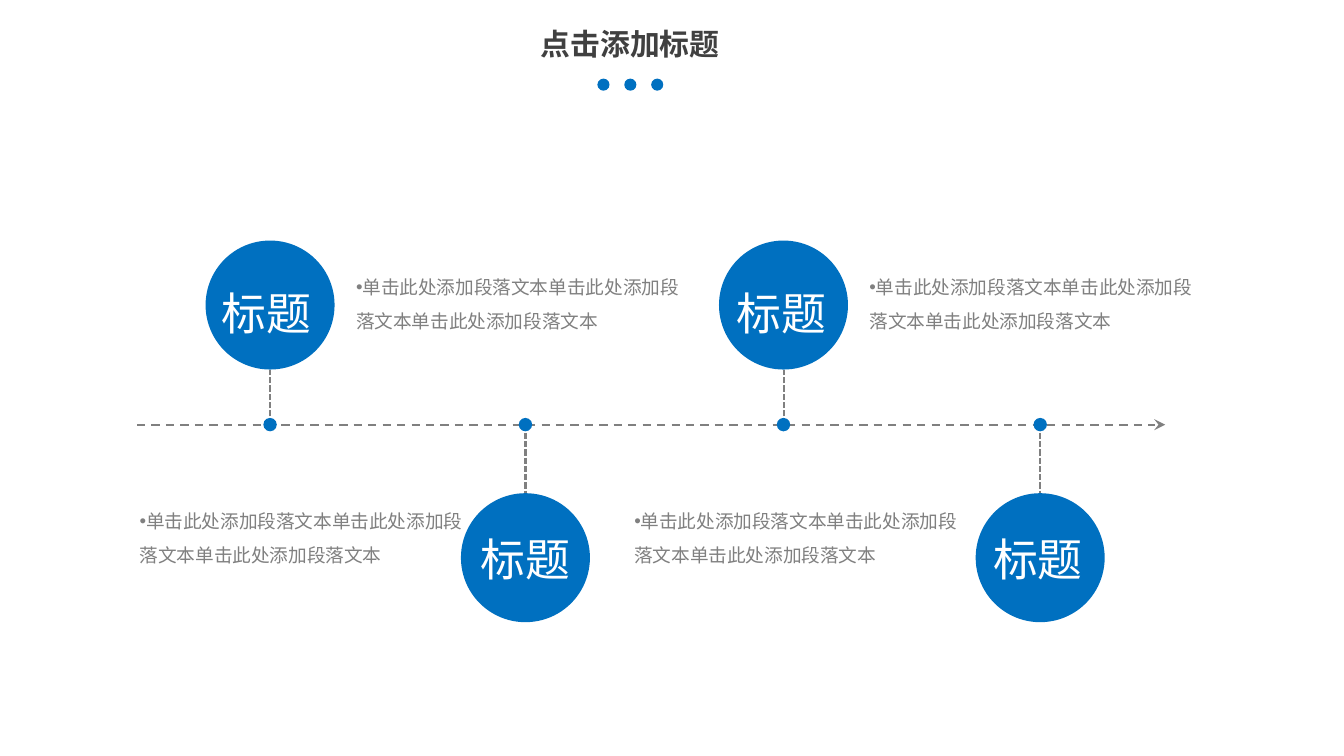
from pptx import Presentation
from pptx.dml.color import RGBColor
from pptx.enum.dml import MSO_LINE
from pptx.enum.shapes import MSO_CONNECTOR, MSO_SHAPE
from pptx.enum.text import PP_ALIGN
from pptx.oxml.ns import qn
from pptx.util import Inches, Pt
from lxml import etree

COLORS = {"blue": "0070C0", "grey": "808080", "dark": "404040", "white": "FFFFFF"}
FONT = "Noto Sans CJK SC"
BODY = "单击此处添加段落文本" * 3
AXIS_Y = 3.16
DIAMETER = 0.96

prs = Presentation()
prs.slide_width = Inches(10)
prs.slide_height = Inches(10 * 9 / 16)
s = prs.slides.add_slide(prs.slide_layouts[6])


def add_text(text, x, y, w, h, size, color, bold=False, margins=(0.1, 0.05)):
    """Add a one-paragraph text box and return the paragraph."""
    tf = s.shapes.add_textbox(Inches(x), Inches(y), Inches(w), Inches(h)).text_frame
    tf.word_wrap = True
    tf.margin_left = tf.margin_right = Inches(margins[0])
    tf.margin_top = tf.margin_bottom = Inches(margins[1])
    tf.text = text
    p = tf.paragraphs[0]
    font = p.runs[0].font
    font.size, font.name, font.bold = Pt(size), FONT, bold
    font.color.rgb = RGBColor.from_string(COLORS[color])
    etree.SubElement(p.runs[0]._r.get_or_add_rPr(), qn("a:ea")).set("typeface", FONT)
    return p


def add_dot(cx, cy, diameter):
    """Add a blue circle centred on (cx, cy)."""
    sp = s.shapes.add_shape(MSO_SHAPE.OVAL, Inches(cx - diameter / 2), Inches(cy - diameter / 2),
                            Inches(diameter), Inches(diameter))
    sp.shadow.inherit = False
    sp.fill.solid()
    sp.fill.fore_color.rgb = RGBColor.from_string(COLORS["blue"])
    sp.line.fill.background()


# Title with three dots below
add_text("点击添加标题", 2.47, 0.14, 4.44, 0.37, 16, "dark", bold=True).alignment = PP_ALIGN.CENTER
for i in range(3):
    add_dot(4.49 + 0.2 * i, 0.63, 0.09)

# Stops: centre x, circle centre y, label (x, y, width), body (x, y)
stops = [
    (2.01, 2.27, (1.55, 2.08, 1), (2.59, 1.94)),
    (3.91, 4.15, (3.48, 3.91, 0.95), (0.98, 3.68)),
    (5.83, 2.27, (5.38, 2.08, 1), (6.41, 1.94)),
    (7.74, 4.15, (7.29, 3.91, 1.05), (4.66, 3.68)),
]

# Dashed time axis and the stems to the circles
lines = [(1.02, AXIS_Y, 8.67, AXIS_Y, MSO_LINE.DASH)]
for x, cy, _, _ in stops:
    edge = cy + DIAMETER / 2 if cy < AXIS_Y else cy - DIAMETER / 2
    lines.append((x, AXIS_Y, x, edge, MSO_LINE.SQUARE_DOT))
for x1, y1, x2, y2, dash in lines:
    line = s.shapes.add_connector(MSO_CONNECTOR.STRAIGHT, Inches(x1), Inches(y1),
                                  Inches(x2), Inches(y2))
    line.line.width = Pt(1.1)
    line.line.color.rgb = RGBColor.from_string(COLORS["grey"])
    line.line.dash_style = dash
    if y1 == y2:
        etree.SubElement(line.line._get_or_add_ln(), qn("a:tailEnd")).set("type", "stealth")
    etree.SubElement(line._element.spPr, qn("a:effectLst"))

# Markers, circles, labels and body text
for x, cy, (label_x, label_y, label_w), (body_x, body_y) in stops:
    add_dot(x, AXIS_Y, 0.1)
    p = add_text(BODY, body_x, body_y, 2.57, 0.9, 10, "grey", margins=(0.06, 0.03))
    p.line_spacing = 1.5
    p.space_before = Pt(5.6)
    pPr = p._p.get_or_add_pPr()
    etree.SubElement(pPr, qn("a:buFont")).set("typeface", "Arial")
    etree.SubElement(pPr, qn("a:buChar")).set("char", "•")
    add_dot(x, cy, DIAMETER)
    add_text("标题", label_x, label_y, label_w, 0.5, 24, "white")

prs.save("out.pptx")
